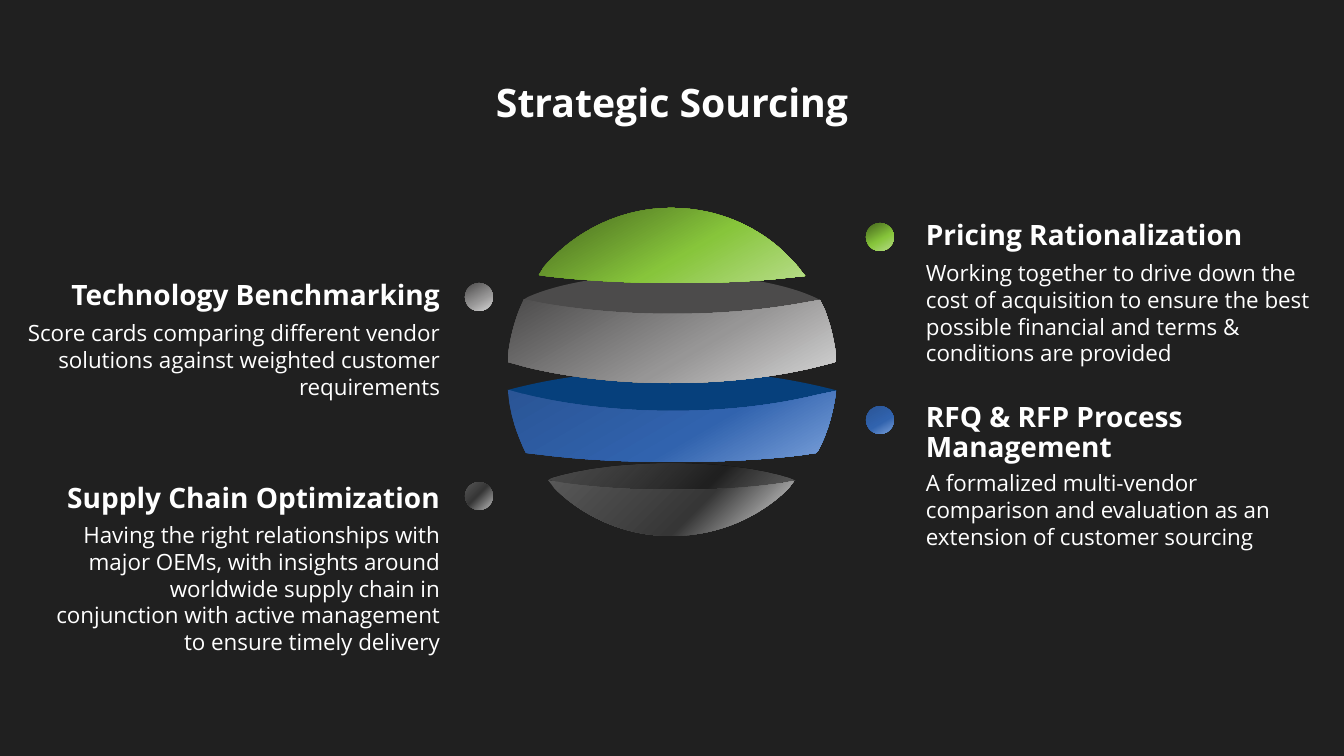
import pptx
import pptx.util
import pptx.dml.color
import pptx.enum.shapes
import pptx.enum.text
import pptx.oxml
import pptx.oxml.ns
from lxml import etree

RGBColor = pptx.dml.color.RGBColor
ALIGN = pptx.enum.text.PP_ALIGN
SHAPE = pptx.enum.shapes.MSO_SHAPE
EMU_PER_PX = 12192000 / 1344
PAGE_BOX = (0, 0, 1344, 756)
DOT_SIZE = 28
FONT = "Open Sans"

WHITE = RGBColor(0xFF, 0xFF, 0xFF)
BACKGROUND = RGBColor(0x20, 0x20, 0x20)
NAVY = RGBColor(0x06, 0x40, 0x7C)
SLATE = RGBColor(0x4C, 0x4B, 0x4B)
GREEN_DARK, GREEN, GREEN_LIGHT = (RGBColor.from_string(c) for c in ("44631D", "87C53B", "B7DC89"))
BLUE_DARK, BLUE, BLUE_LIGHT = (RGBColor.from_string(c) for c in ("2A5596", "3163AE", "799FD9"))
GRAY, GRAY_LIGHT = RGBColor(0x97, 0x96, 0x96), RGBColor(0xD5, 0xD5, 0xD5)
COAL, COAL_DARK = RGBColor(0x58, 0x58, 0x58), RGBColor(0x36, 0x36, 0x36)
SILVER, ASH, STEEL = (RGBColor.from_string(c) for c in ("DFDFDF", "B8B8B8", "909090"))

GREEN_FADE = (60, [(0, GREEN_DARK, 100), (57, GREEN, 100), (100, GREEN_LIGHT, 100)])
GRAY_FADE = (60, [(0, SLATE, 100), (58, GRAY, 100), (100, GRAY_LIGHT, 100)])
BLUE_FADE = (60, [(0, BLUE_DARK, 100), (58, BLUE, 100), (99, BLUE_LIGHT, 100)])
BOWL_FADE = (45, [(0, COAL, 100), (59, COAL_DARK, 100), (98, SILVER, 100)])
RIM_FADE = (45, [(0, COAL, 77), (59, BACKGROUND, 100), (99, STEEL, 60)])
COAL_FADE = (45, [(0, COAL, 100), (47, COAL_DARK, 100), (99, ASH, 100)])

HEADING = {"size": pptx.util.Pt(20), "bold": True, "name": FONT}
DETAIL = {"size": pptx.util.Pt(16), "bold": False, "name": FONT}
TITLE = {"size": pptx.util.Pt(28), "bold": True, "name": FONT}

SPHERE_BOX = (507, 208, 330, 328)
SPHERE_BANDS = [
    (RIM_FADE, [(164, 256), (210, 256, 250, 261, 280, 270), (288, 273), (167, 317),
                (42, 272), (47, 270), (78, 261, 118, 256, 164, 256)]),
    (BOWL_FADE, [(41, 272), (57, 275), (92, 280, 129, 282, 166, 282),
                 (205, 282, 242, 280, 276, 275), (287, 273), (281, 281),
                 (251, 310, 210, 328, 164, 328), (119, 328, 78, 310, 48, 281)]),
    (NAVY, [(164, 162), (223, 162, 278, 169, 328, 182), (330, 183), (164, 248),
            (0, 182), (1, 182), (49, 169, 105, 162, 164, 162)]),
    (BLUE_FADE, [(1, 182), (2, 182), (46, 195, 104, 203, 166, 203),
                 (220, 203, 269, 197, 310, 187), (329, 183), (329, 184),
                 (326, 205, 321, 224, 311, 243), (309, 245), (296, 247),
                 (256, 252, 212, 254, 166, 254), (120, 254, 76, 252, 36, 247),
                 (19, 245), (18, 243), (9, 224, 3, 205, 1, 184)]),
    (SLATE, [(164, 66), (224, 66, 276, 75, 307, 89), (313, 92), (165, 155),
             (16, 92), (21, 89), (52, 75, 105, 66, 164, 66)]),
    (GRAY_FADE, [(17, 91), (35, 95), (74, 102, 119, 106, 165, 106),
                 (213, 106, 257, 102, 296, 95), (313, 92), (317, 100),
                 (323, 115, 327, 131, 329, 148), (329, 154), (328, 154),
                 (283, 167, 226, 175, 163, 175), (110, 175, 60, 169, 19, 159),
                 (1, 154), (1, 148), (3, 131, 7, 115, 13, 100)]),
    (GREEN_FADE, [(164, 0), (216, 0, 261, 23, 291, 59), (298, 68), (269, 71),
                  (238, 74, 204, 75, 169, 75), (123, 75, 79, 73, 38, 68),
                  (32, 67), (37, 59), (68, 23, 114, 0, 164, 0)]),
]

TOPICS = [
    ((916, 216, 412, 157), ALIGN.LEFT, 382, 38, 7, GREEN_FADE, "Pricing Rationalization",
     "Working together to drive down the cost of acquisition to ensure the best possible "
     "financial and terms & conditions are provided"),
    ((16, 276, 434, 157), ALIGN.RIGHT, 434, 38, 7, GRAY_FADE, "Technology Benchmarking",
     "Score cards comparing different vendor solutions against weighted customer requirements"),
    ((916, 398, 414, 158), ALIGN.LEFT, 390, 66, 8, BLUE_FADE, "RFQ & RFP Process Management",
     "A formalized multi-vendor comparison and evaluation as an extension of customer sourcing"),
    ((36, 479, 414, 210), ALIGN.RIGHT, 395, 37, 3, COAL_FADE, "Supply Chain Optimization",
     "Having the right relationships with major OEMs, with insights around worldwide supply "
     "chain in conjunction with active management to ensure timely delivery"),
]


def px(length):
    """Turn pixels into EMU."""
    return pptx.util.Emu(round(length * EMU_PER_PX))


def paint(shape, paint_style):
    """Fill a shape with one colour or a fade, without line or shadow."""
    shape.shadow.inherit = False
    shape.line.fill.background()
    if isinstance(paint_style, RGBColor):
        shape.fill.solid()
        shape.fill.fore_color.rgb = paint_style
        return
    angle, stops = paint_style
    shape.fill.gradient()
    fade = shape._element.spPr.find(pptx.oxml.ns.qn("a:gradFill"))
    for child in list(fade):
        fade.remove(child)
    stop_list = etree.SubElement(fade, pptx.oxml.ns.qn("a:gsLst"))
    for position, color, opacity in stops:
        stop = etree.SubElement(stop_list, pptx.oxml.ns.qn("a:gs"), pos=str(position * 1000))
        tint = etree.SubElement(stop, pptx.oxml.ns.qn("a:srgbClr"), val=str(color))
        if opacity < 100:
            etree.SubElement(tint, pptx.oxml.ns.qn("a:alpha"), val=str(opacity * 1000))
    etree.SubElement(fade, pptx.oxml.ns.qn("a:lin"), ang=str(angle * 60000), scaled="0")


def write(shape, text, style, align, spacing=None, wrap=True):
    """Put one formatted paragraph into a shape from the top."""
    frame = shape.text_frame
    frame.word_wrap = wrap
    frame.vertical_anchor = pptx.enum.text.MSO_ANCHOR.TOP
    para = frame.paragraphs[0]
    para.alignment = align
    para.line_spacing = spacing
    span = para.add_run()
    span.text = text
    for name, value in style.items():
        setattr(span.font, name, value)
    span.font.color.rgb = WHITE


def add_outline(shapes, origin, outline):
    """Draw a closed outline, where six numbers make a cubic curve."""
    left, top = origin
    points = [(px(left + x), px(top + y))
              for step in outline for x, y in zip(step[::2], step[1::2])]
    builder = shapes.build_freeform(*points[0], scale=1.0)
    builder.add_line_segments(points[1:], close=True)
    shape = builder.convert_to_shape()
    segments = iter(list(shape._element.spPr.iter(pptx.oxml.ns.qn("a:lnTo"))))
    for step in outline[1:]:
        segment = next(segments)
        if len(step) == 6:
            curve = etree.Element(pptx.oxml.ns.qn("a:cubicBezTo"))
            segment.addprevious(curve)
            for part in (segment, next(segments), next(segments)):
                curve.append(part[0])
                part.getparent().remove(part)
    return shape


def add_backdrop(deck, page, box):
    """Put a dark panel at the back of the slide master."""
    panel = page.shapes.add_shape(SHAPE.RECTANGLE, *map(px, box))
    paint(panel, BACKGROUND)
    deck.slide_master.shapes._spTree.insert(2, panel._element)


def add_title(page, box, text):
    """Place the title placeholder."""
    title = page.shapes.title
    title.left, title.top, title.width, title.height = map(px, box)
    write(title, text, TITLE, ALIGN.CENTER, wrap=False)


def add_sphere(page, box):
    """Draw the sliced sphere from its bands."""
    group = page.shapes.add_group_shape()
    for style, outline in SPHERE_BANDS:
        paint(add_outline(group.shapes, box[:2], outline), style)


def add_topic(page, box, align, heading_width, detail_drop, dot_drop, fade, heading, detail):
    """Place a heading, its detail and the dot facing the sphere."""
    left, top, width, height = box
    on_right = align == ALIGN.LEFT
    heading_left = left if on_right else left + width - heading_width
    heading_box = page.shapes.add_textbox(px(heading_left), px(top), px(heading_width), px(44))
    write(heading_box, heading, HEADING, align, 0.9)
    detail_box = page.shapes.add_textbox(
        px(left), px(top + detail_drop), px(width), px(height - detail_drop))
    write(detail_box, detail, DETAIL, align)
    dot_left = left - 50 if on_right else left + width + 15
    dot = page.shapes.add_shape(SHAPE.OVAL, px(dot_left), px(top + dot_drop),
                                px(DOT_SIZE), px(DOT_SIZE))
    paint(dot, fade)


def main():
    """Build the deck."""
    deck = pptx.Presentation()
    deck.slide_width, deck.slide_height = map(px, PAGE_BOX[2:])
    page = deck.slides.add_slide(deck.slide_layouts[5])
    add_backdrop(deck, page, PAGE_BOX)
    add_title(page, (479, 73, 386, 57), "Strategic Sourcing")
    add_sphere(page, SPHERE_BOX)
    for topic in TOPICS:
        add_topic(page, *topic)
    deck.save("out.pptx")


if __name__ == "__main__":
    main()
